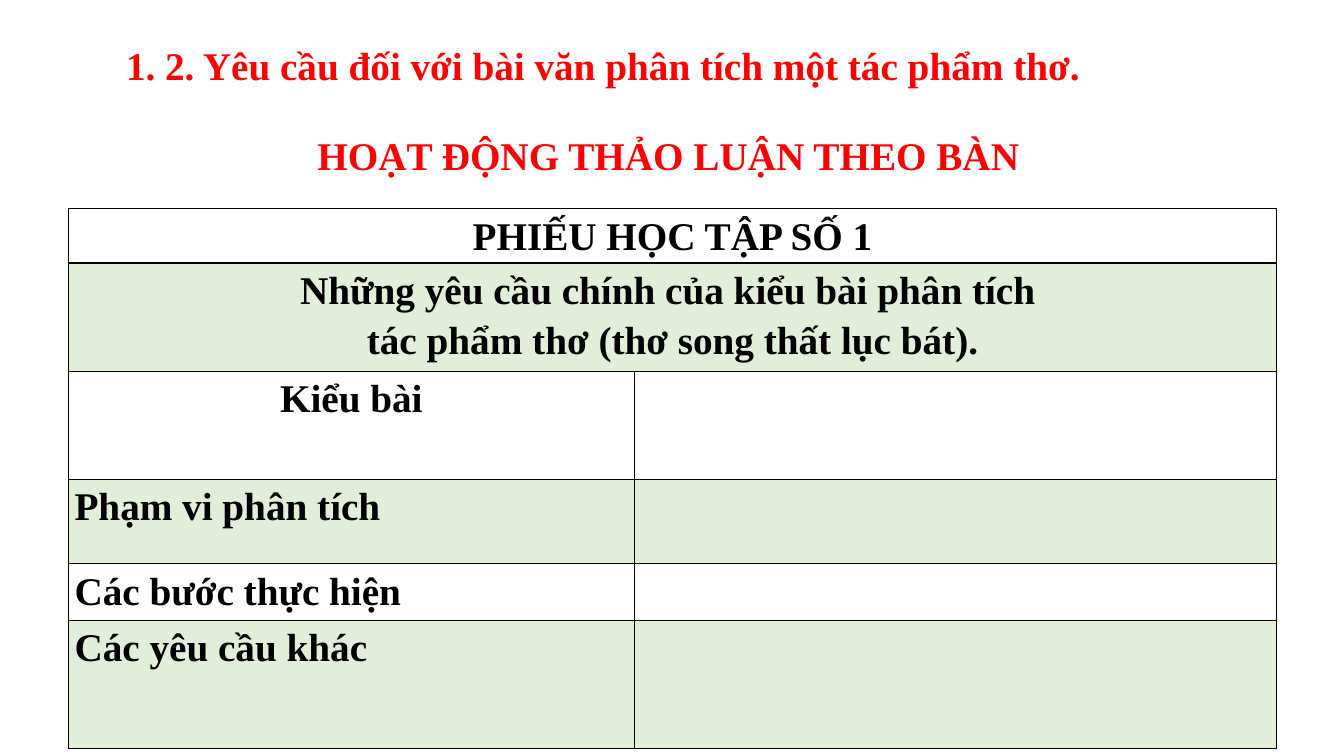
from lxml import etree
from pptx import Presentation
from pptx import util as u
from pptx.dml.color import RGBColor
from pptx.enum import text
from pptx.oxml import ns

RED = RGBColor(0xFF, 0x00, 0x00)
BLACK = RGBColor(0x00, 0x00, 0x00)
GREEN = RGBColor(0x70, 0xAD, 0x47)
MID = text.PP_ALIGN.CENTER
JUST = text.PP_ALIGN.JUSTIFY
LEFT = text.PP_ALIGN.LEFT


class Page:
    font = "Times New Roman"
    size = u.Pt(28)
    lead = 1.15

    def __init__(self, deck):
        self.slide = deck.slides.add_slide(deck.slide_layouts[5])

    def fill_text(self, frame, lines, color, align, after=0):
        for i, line in enumerate(lines):
            para = frame.add_paragraph() if i else frame.paragraphs[0]
            para.alignment = align
            para.line_spacing = self.lead
            para.space_before = u.Pt(0)
            para.space_after = u.Pt(after)
            run = para.add_run()
            run.text = line
            run.font.name = self.font
            run.font.size = self.size
            run.font.bold = True
            run.font.color.rgb = color

    def place(self, shape, box, line, align, after=0):
        shape.left, shape.top, shape.width, shape.height = map(u.Inches, box)
        frame = shape.text_frame
        frame.word_wrap = False
        frame.auto_size = text.MSO_AUTO_SIZE.SHAPE_TO_FIT_TEXT
        frame.vertical_anchor = text.MSO_ANCHOR.TOP
        self.fill_text(frame, [line], RED, align, after)

    def title(self, box, line):
        self.place(self.slide.shapes.title, box, line, JUST)

    def label(self, box, line):
        shape = self.slide.shapes.add_textbox(*map(u.Inches, box))
        self.place(shape, box, line, LEFT, after=8)

    def edge(self, cell):
        props = cell._tc.get_or_add_tcPr()
        for side in ("a:lnL", "a:lnR", "a:lnT", "a:lnB"):
            line = etree.SubElement(props, ns.qn(side), w=str(u.Pt(1)))
            fill = etree.SubElement(line, ns.qn("a:solidFill"))
            etree.SubElement(fill, ns.qn("a:srgbClr"), val=str(BLACK))

    def tint(self, cell, shade):
        if not shade:
            cell.fill.background()
            return
        cell.fill.solid()
        cell.fill.fore_color.rgb = GREEN
        fill = cell._tc.tcPr.find(ns.qn("a:solidFill"))
        etree.SubElement(fill[0], ns.qn("a:alpha"), val="20000")

    def table(self, left, top, cols, rows):
        high = sum(row[0] for row in rows)
        box = map(u.Inches, (left, top, sum(cols), high))
        grid = self.slide.shapes.add_table(len(rows), len(cols), *box).table
        grid.first_row = grid.horz_banding = False
        for col, width in zip(grid.columns, cols):
            col.width = u.Inches(width)
        for r, (height, lines, align, wide) in enumerate(rows):
            grid.rows[r].height = u.Inches(height)
            for c in range(len(cols)):
                cell = grid.cell(r, c)
                self.edge(cell)
                self.tint(cell, r % 2)
            head = grid.cell(r, 0)
            if wide:
                head.merge(grid.cell(r, len(cols) - 1))
            head.margin_left = head.margin_right = u.Inches(0.06)
            head.margin_top = head.margin_bottom = 0
            self.fill_text(head.text_frame, lines, BLACK, align)


def main():
    deck = Presentation()
    deck.slide_width, deck.slide_height = u.Inches(13.33), u.Inches(7.5)
    page = Page(deck)

    # Heading
    page.title((1.15, 0.29, 9.77, 0.6),
               "1. 2. Yêu cầu đối với bài văn phân tích một tác phẩm thơ.")

    # Worksheet: height, lines, alignment, spans both columns
    page.table(0.68, 2.07, (5.61, 6.37), [
        (0.54, ["PHIẾU HỌC TẬP SỐ 1"], MID, True),
        (1.07, ["Những yêu cầu chính của kiểu bài phân tích ",
                "tác phẩm thơ (thơ song thất lục bát)."], MID, True),
        (1.07, ["Kiểu bài"], MID, False),
        (0.84, ["Phạm vi phân tích"], JUST, False),
        (0.56, ["Các bước thực hiện"], JUST, False),
        (1.27, ["Các yêu cầu khác"], JUST, False),
    ])

    # Activity line
    page.label((3.05, 1.18, 7.24, 0.61), "HOẠT ĐỘNG THẢO LUẬN THEO BÀN")
    deck.save("out.pptx")


if __name__ == "__main__":
    main()
